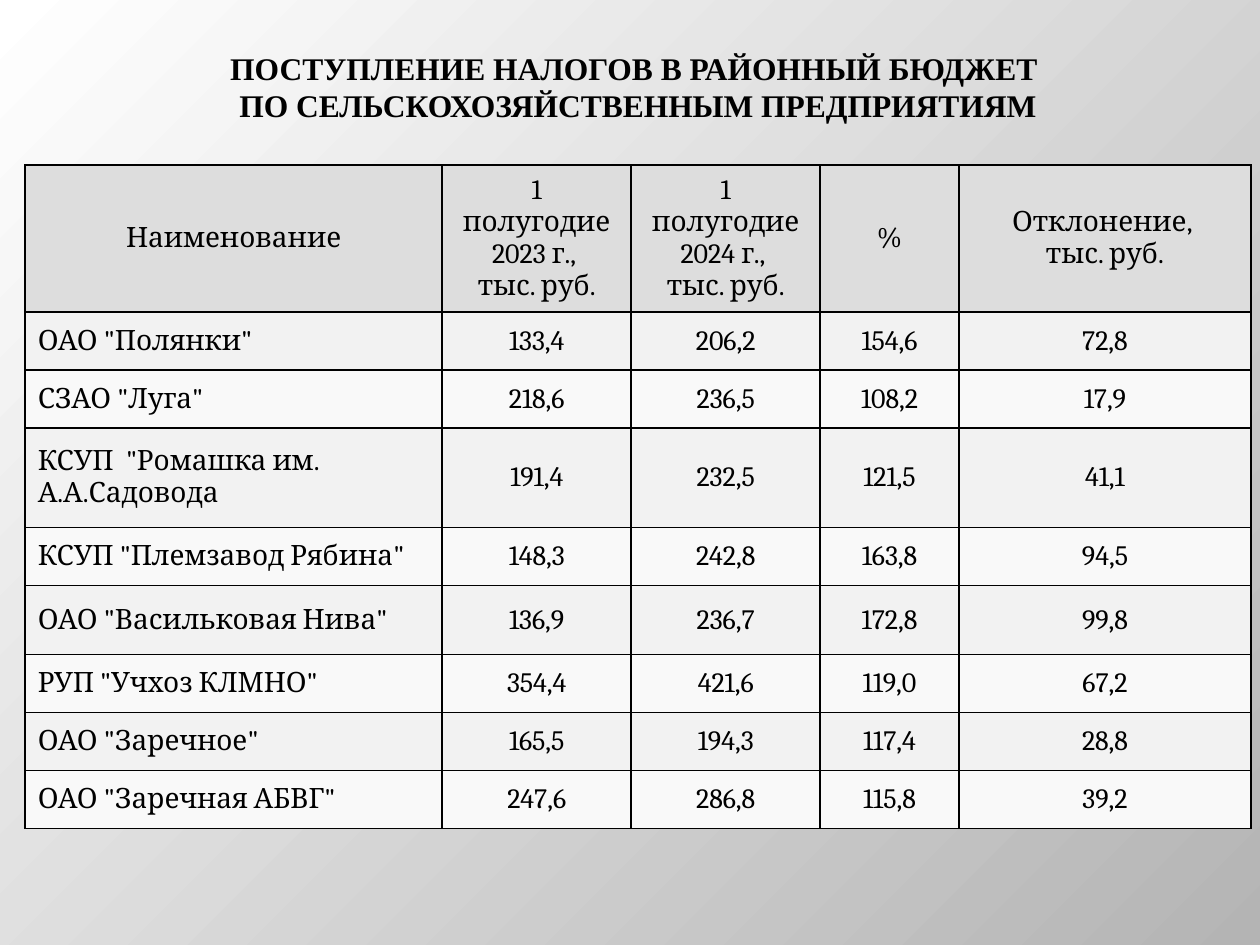
from typing import NamedTuple

from lxml.etree import SubElement
from pptx import Presentation
from pptx.dml.color import RGBColor
from pptx.enum.text import MSO_ANCHOR, PP_ALIGN
from pptx.oxml.ns import qn
from pptx.util import Inches, Pt

BLACK = RGBColor(0x00, 0x00, 0x00)
WHITE = RGBColor(0xFF, 0xFF, 0xFF)
GREY = RGBColor(0xB4, 0xB4, 0xB4)
HEADER_FILL = RGBColor(0xDD, 0xDD, 0xDD)
BAND_FILLS = (RGBColor(0xF2, 0xF2, 0xF2), RGBColor(0xF9, 0xF9, 0xF9))

TITLE = ("ПОСТУПЛЕНИЕ НАЛОГОВ В РАЙОННЫЙ БЮДЖЕТ \v"
         "ПО СЕЛЬСКОХОЗЯЙСТВЕННЫМ ПРЕДПРИЯТИЯМ")
HEADERS = (
    "Наименование",
    "1 полугодие 2023 г., \nтыс. руб.",
    "1 полугодие 2024 г., \nтыс. руб.",
    "%",
    "Отклонение, \nтыс. руб.",
)
COL_WIDTHS = (3.31, 1.5, 1.5, 1.1, 2.32)
HEADER_HEIGHT = 0.79


class TaxRow(NamedTuple):
    name: str
    year_2023: str
    year_2024: str
    percent: str
    change: str
    height: float = 0.46

    def texts(self):
        return self[:5]


ROWS = (
    TaxRow('ОАО "Полянки"', "133,4", "206,2", "154,6", "72,8"),
    TaxRow('СЗАО "Луга"', "218,6", "236,5", "108,2", "17,9"),
    TaxRow('КСУП  "Ромашка им. А.А.Садовода', "191,4", "232,5", "121,5", "41,1", 0.79),
    TaxRow('КСУП "Племзавод Рябина"', "148,3", "242,8", "163,8", "94,5"),
    TaxRow('ОАО "Васильковая Нива"', "136,9", "236,7", "172,8", "99,8", 0.55),
    TaxRow('РУП "Учхоз КЛМНО"', "354,4", "421,6", "119,0", "67,2"),
    TaxRow('ОАО "Заречное"', "165,5", "194,3", "117,4", "28,8"),
    TaxRow('ОАО "Заречная АБВГ"', "247,6", "286,8", "115,8", "39,2"),
)


def write_text(tf, text: str, *, font: str, size: float, bold: bool = False,
               align=PP_ALIGN.CENTER) -> None:
    tf.text = text
    tf.word_wrap = True
    for p in tf.paragraphs:
        p.alignment = align
        for r in p.runs:
            r.font.name = font
            r.font.size = Pt(size)
            r.font.bold = bold
            r.font.color.rgb = BLACK


def set_background(s) -> None:
    """Radial gradient that spreads from the top left corner."""
    fill = s.background.fill
    fill.gradient()
    for stop, color in zip(fill.gradient_stops, (WHITE, GREY)):
        stop.color.rgb = color
    grad = next(s.element.iter(qn("a:gradFill")))
    grad.remove(grad.find(qn("a:lin")))
    radial = SubElement(grad, qn("a:path"), {"path": "circle"})
    SubElement(radial, qn("a:fillToRect"), {"r": "100000", "b": "100000"})


def add_borders(cell) -> None:
    """Black 1 pt lines; they must precede the fill in the cell properties."""
    tc_pr = cell._tc.get_or_add_tcPr()
    for i, side in enumerate(("lnL", "lnR", "lnT", "lnB")):
        ln = SubElement(tc_pr, qn(f"a:{side}"), {"w": str(Pt(1))})
        solid = SubElement(ln, qn("a:solidFill"))
        SubElement(solid, qn("a:srgbClr"), {"val": str(BLACK)})
        tc_pr.insert(i, ln)


def format_cell(cell, text: str, fill: RGBColor, align) -> None:
    write_text(cell.text_frame, text, font="Cambria", size=16, align=align)
    cell.vertical_anchor = MSO_ANCHOR.MIDDLE
    cell.fill.solid()
    cell.fill.fore_color.rgb = fill
    add_borders(cell)


def add_title(s) -> None:
    sp = s.shapes.add_textbox(Inches(0.28), Inches(0.29), Inches(9.57), Inches(0.79))
    write_text(sp.text_frame, TITLE, font="Times New Roman", size=18, bold=True)
    sp.text_frame.vertical_anchor = MSO_ANCHOR.MIDDLE


def add_tax_table(s) -> None:
    heights = [HEADER_HEIGHT] + [row.height for row in ROWS]
    table = s.shapes.add_table(
        len(heights), len(COL_WIDTHS), Inches(0.2), Inches(1.31),
        Inches(sum(COL_WIDTHS)), Inches(sum(heights))).table
    for column, width in zip(table.columns, COL_WIDTHS):
        column.width = Inches(width)
    for row, height in zip(table.rows, heights):
        row.height = Inches(height)

    for c, text in enumerate(HEADERS):
        format_cell(table.cell(0, c), text, HEADER_FILL, PP_ALIGN.CENTER)
    for i, row in enumerate(ROWS):
        for c, text in enumerate(row.texts()):
            align = PP_ALIGN.CENTER if c else PP_ALIGN.LEFT
            format_cell(table.cell(i + 1, c), text, BAND_FILLS[i % 2], align)


def main() -> None:
    prs = Presentation()
    prs.slide_width = Inches(10)
    prs.slide_height = Inches(7.5)
    s = prs.slides.add_slide(prs.slide_layouts[6])
    set_background(s)
    add_title(s)
    add_tax_table(s)
    prs.save("out.pptx")


if __name__ == "__main__":
    main()
